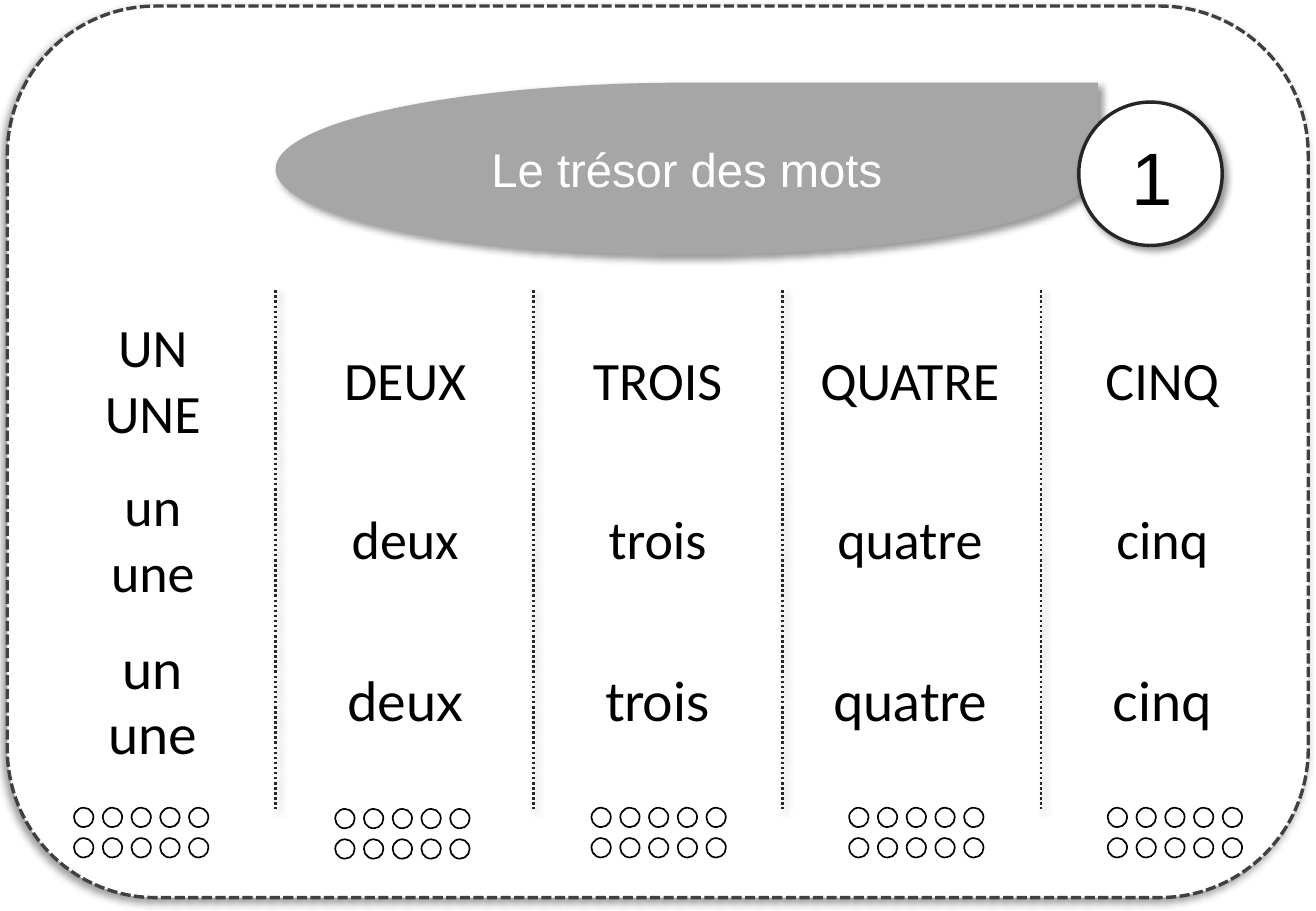
from dataclasses import dataclass
from itertools import product

from lxml import etree
from pptx import Presentation
from pptx.dml.color import RGBColor
from pptx.enum.dml import MSO_LINE_DASH_STYLE
from pptx.enum.shapes import MSO_CONNECTOR_TYPE, MSO_SHAPE
from pptx.enum.text import MSO_ANCHOR, PP_ALIGN
from pptx.oxml.ns import qn
from pptx.util import Pt

STRAIGHT = MSO_CONNECTOR_TYPE.STRAIGHT
ROUNDED = MSO_SHAPE.ROUNDED_RECTANGLE
OVAL = MSO_SHAPE.OVAL
TEAR = MSO_SHAPE.TEAR
DASHED = MSO_LINE_DASH_STYLE.SQUARE_DOT
DOTTED = MSO_LINE_DASH_STYLE.ROUND_DOT
CENTER = PP_ALIGN.CENTER
MIDDLE = MSO_ANCHOR.MIDDLE
TOP = MSO_ANCHOR.TOP


@dataclass(frozen=True)
class Theme:
    white: str = "FFFFFF"
    black: str = "000000"
    border: str = "404040"
    rule: str = "262626"
    banner: str = "A6A6A6"
    heading_font: str = "Arial"
    print_font: str = "Calibri"
    school_font: str = "Lato"
    title_size: float = 28
    number_size: float = 44
    word_size: float = 32


THEME = Theme()
NO_GRID_STYLE = "{2D5ABB26-0587-4C30-8999-92F81FD0307C}"
DIVIDERS = (163.4, 316.1, 463.7, 617)
DIVIDER_TOP, DIVIDER_BOTTOM = 172.1, 479.5
COUNTERS = ((43.9, 478.8), (198.7, 479.5), (350.6, 478.8), (503.3, 478.8), (656.6, 478.8))
DOT_SIZE, DOT_STEP, DOT_ROW_STEP = 11.5, 17.04, 18
WORDS = (("un", "une"), ("deux",), ("trois",), ("quatre",), ("cinq",))
COLUMN_WIDTH, ROW_HEIGHT = 149.6, 94.5


def add_shadow(item, direction):
    properties = item.element.spPr
    effects = properties.find(qn("a:effectLst"))
    if effects is None:
        effects = etree.SubElement(properties, qn("a:effectLst"))
    shadow = etree.SubElement(
        effects, qn("a:outerShdw"), blurRad=str(Pt(4)), dist=str(Pt(3)),
        dir=str(direction * 60000), algn="ctr", rotWithShape="0")
    color = etree.SubElement(shadow, qn("a:srgbClr"), val=THEME.black)
    etree.SubElement(color, qn("a:alpha"), val="40000")


def style_line(line, color, width, dash=None):
    line.color.rgb = RGBColor.from_string(color)
    line.width = Pt(width)
    if dash is not None:
        line.dash_style = dash


def add_figure(shapes, preset, box, fill, line=None, shadow_direction=None):
    figure = shapes.add_shape(preset, *map(Pt, box))
    figure.shadow.inherit = False
    figure.fill.solid()
    figure.fill.fore_color.rgb = RGBColor.from_string(fill)
    if line:
        style_line(figure.line, *line)
    else:
        figure.line.fill.background()
    if shadow_direction is not None:
        add_shadow(figure, shadow_direction)
    return figure


def write_lines(frame, lines, font, size, color):
    for index, text in enumerate(lines):
        paragraph = frame.paragraphs[0] if index == 0 else frame.add_paragraph()
        paragraph.alignment = CENTER
        run = paragraph.add_run()
        run.text = text
        run.font.name = font
        run.font.size = Pt(size)
        run.font.color.rgb = RGBColor.from_string(color)


def add_divider(shapes, x):
    divider = shapes.add_connector(
        STRAIGHT, Pt(x), Pt(DIVIDER_TOP), Pt(x), Pt(DIVIDER_BOTTOM))
    style_line(divider.line, THEME.rule, 1.5, DOTTED)
    add_shadow(divider, 45)


def add_counter(shapes, left, top):
    counter = shapes.add_group_shape()
    for row, column in product(range(2), range(5)):
        box = (left + column * DOT_STEP, top + row * DOT_ROW_STEP, DOT_SIZE, DOT_SIZE)
        add_figure(counter.shapes, OVAL, box, THEME.white, (THEME.black, 1))


def add_title(shapes):
    banner = add_figure(shapes, TEAR, (163.4, 49, 487.4, 102.2), THEME.banner,
                        shadow_direction=45)
    banner.text_frame.vertical_anchor = MIDDLE
    write_lines(banner.text_frame, ["Le trésor des mots"],
                THEME.heading_font, THEME.title_size, THEME.white)


def add_number(shapes):
    add_figure(shapes, OVAL, (639.4, 60.5, 85, 85), THEME.white, (THEME.rule, 2), 45)
    number = shapes.add_textbox(Pt(640.1), Pt(69.8), Pt(85), Pt(79.2))
    frame = number.text_frame
    frame.word_wrap = True
    frame.vertical_anchor = TOP
    frame.margin_top = Pt(8.3)
    write_lines(frame, ["1"], THEME.heading_font, THEME.number_size, THEME.black)


def add_word_table(shapes):
    rows = (
        ([[word.upper() for word in forms] for forms in WORDS], THEME.print_font),
        (WORDS, THEME.print_font),
        (WORDS, THEME.school_font),
    )
    holder = shapes.add_table(len(rows), len(WORDS), Pt(15.8), Pt(179.3),
                              Pt(COLUMN_WIDTH * len(WORDS)), Pt(ROW_HEIGHT * len(rows)))
    for style in holder.element.iter(qn("a:tableStyleId")):
        style.text = NO_GRID_STYLE
    table = holder.table
    table.first_row = False
    table.horz_banding = False
    for row, (entries, font) in enumerate(rows):
        for column, forms in enumerate(entries):
            cell = table.cell(row, column)
            cell.fill.background()
            cell.vertical_anchor = MIDDLE
            write_lines(cell.text_frame, forms, font, THEME.word_size, THEME.black)


def main():
    deck = Presentation()
    deck.slide_width, deck.slide_height = Pt(780), Pt(540)
    shapes = deck.slides.add_slide(deck.slide_layouts[6]).shapes
    add_figure(shapes, ROUNDED, (4.3, 3.6, 771.1, 528.5), THEME.white,
               (THEME.border, 2, DASHED), 135)
    for x in DIVIDERS:
        add_divider(shapes, x)
    for left, top in COUNTERS:
        add_counter(shapes, left, top)
    add_title(shapes)
    add_number(shapes)
    add_word_table(shapes)
    deck.save("out.pptx")


if __name__ == "__main__":
    main()
